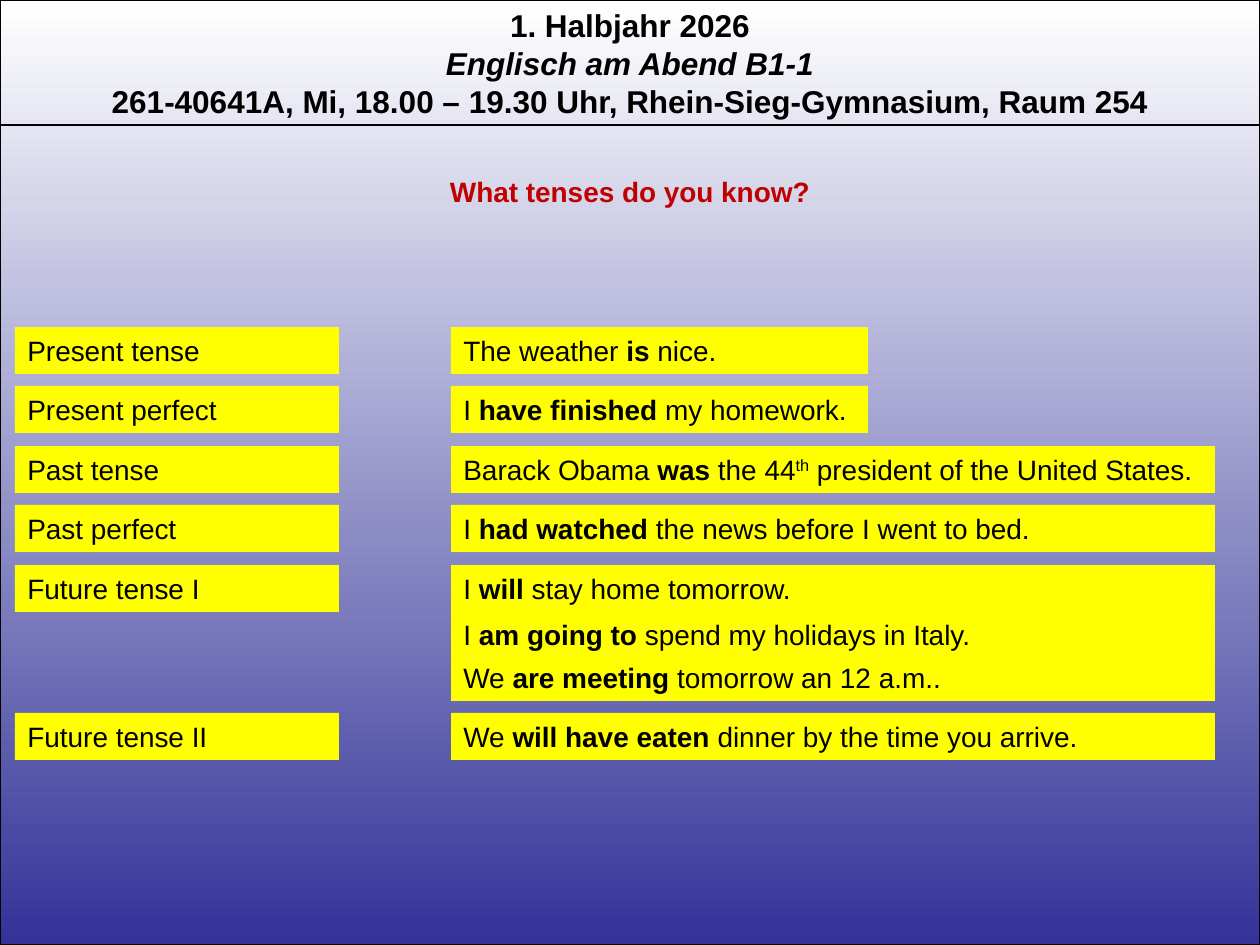
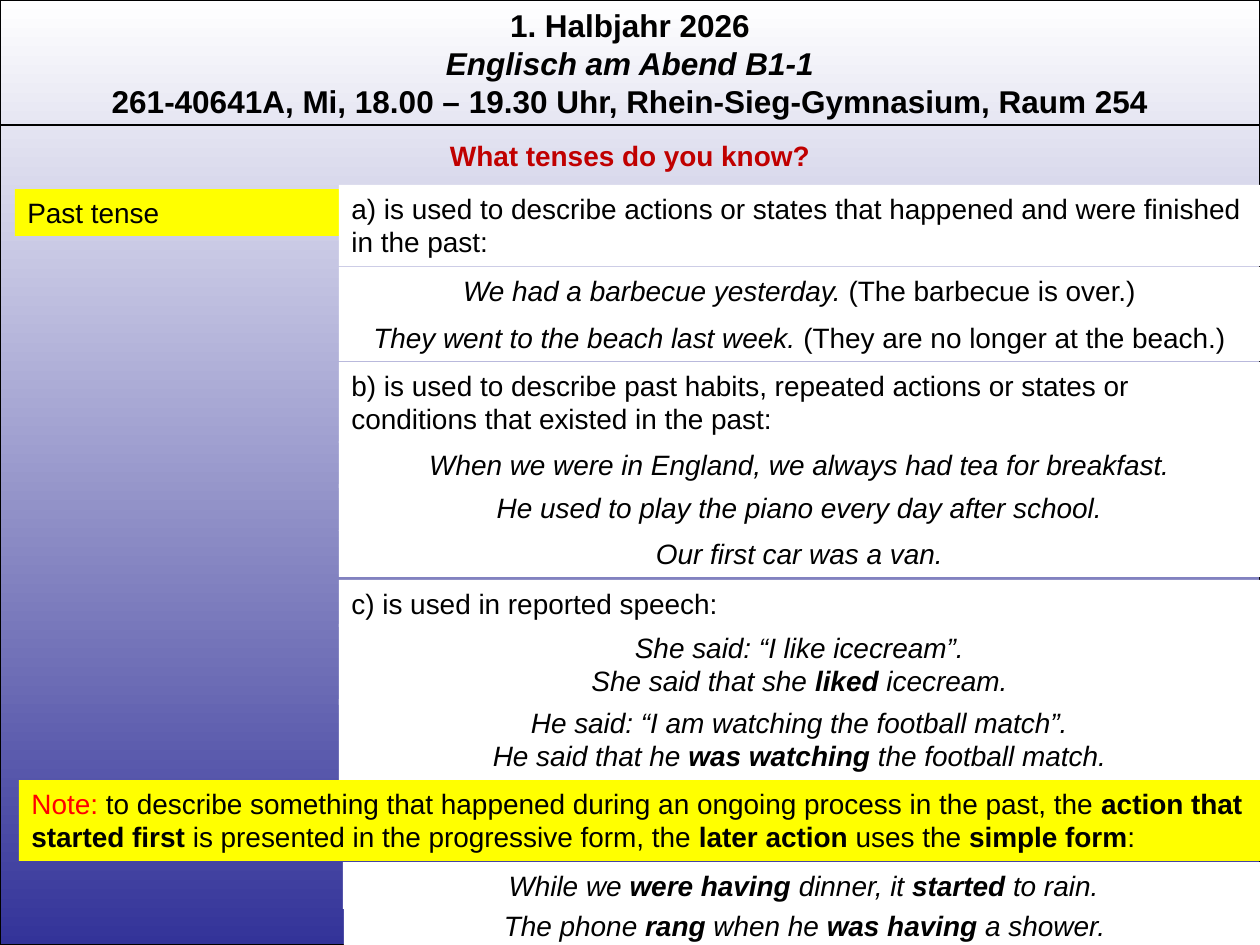
"""Build two English-course slides about tenses."""
from dataclasses import dataclass
from itertools import count

from lxml.etree import SubElement
from pptx import Presentation
from pptx.dml.color import RGBColor as Rgb
from pptx.enum.shapes import MSO_CONNECTOR as Connector, MSO_SHAPE as Preset
from pptx.enum.text import MSO_ANCHOR as Anchor, MSO_AUTO_SIZE as AutoSize, PP_ALIGN as Align
from pptx.oxml.ns import qn
from pptx.util import Emu, Pt

HEADER = [
    "*1. Halbjahr 2026*",
    "*_Englisch am Abend B1-1_*",
    "*261-40641A, Mi, 18.00 – 19.30 Uhr, Rhein-Sieg-Gymnasium, Raum 254*",
]
QUESTION = "What tenses do you know?"

SHORT, LONG = 417, 764
TENSES = [
    ("Present tense", SHORT, ["The weather *is* nice."]),
    ("Present perfect", SHORT, ["I *have finished *my homework."]),
    ("Past tense", LONG, ["Barack Obama *was* the 44^th^ president of the United States."]),
    ("Past perfect", LONG, ["I *had watched *the news before I went to bed."]),
    ("Future tense I", LONG, [
        "I *will *stay home tomorrow.",
        "I *am going to* spend my holidays in Italy.",
        "We *are meeting *tomorrow an 12 a.m..",
    ]),
    ("Future tense II", LONG, ["We *will have eaten *dinner by the time you arrive."]),
]

RULES = [
    (185, ["a) is used to describe actions or states that happened and were finished in the past:"]),
    (362, ["b) is used to describe past habits, repeated actions or states or conditions "
           "that existed in the past:"]),
    (580, ["c) is used in reported speech:"]),
]
EXAMPLES = [
    (339, 267, ["_We had a barbecue yesterday. _(The barbecue is over.)"]),
    (339, 314, ["_They went to the beach last week. _(They are no longer at the beach.)"]),
    (339, 441, ["_When we were in England, we always had tea for breakfast._"]),
    (339, 484, ["_He used to play the piano every day after school._"]),
    (339, 530, ["_Our first car was a van._"]),
    (339, 624, ["_She said: “I like icecream”._", "_She said that she *liked *icecream._"]),
    (339, 699, ["_He said: “I am watching the football match”._",
                "_He said that he *was watching *the football match._"]),
    (343, 862, ["_While we *were having *dinner, it *started *to rain._"]),
    (344, 902, ["_The phone *rang *when he *was having *a shower._"]),
]
NOTE = ("~Note: ~to describe something that happened during an ongoing process in the past, the "
        "*action that started first *is presented in the progressive form, the "
        "*later action *uses the *simple form*:")


@dataclass(frozen=True)
class Theme:
    """Shared colours, font and type sizes."""
    font: str = "Arial"
    header_size: int = 18
    text_size: int = 16
    ink: Rgb = Rgb(0, 0, 0)
    paper: Rgb = Rgb(255, 255, 255)
    depth: Rgb = Rgb(0x33, 0x33, 0x99)
    highlight: Rgb = Rgb(255, 255, 0)
    question: Rgb = Rgb(0xC0, 0, 0)
    alert: Rgb = Rgb(255, 0, 0)


THEME = Theme()
PX = 914400 / 126
WIDTH, HEIGHT = 1260, 945
ONE_LINE, TWO_LINES = 47, 81
LABEL_LEFT, LABEL_WIDTH = 15, 324
SENTENCE_LEFT, RULE_LEFT, RULE_WIDTH = 451, 339, 921
STACK = (0, 46, 89)
MARKS = "*_^~"


def px(*lengths):
    """Convert pixel lengths to EMU."""
    return [Emu(round(length * PX)) for length in lengths]


def marked_spans(line):
    """Split a line into (text, active marks) at its toggling marks."""
    active, text = set(), ""
    for char in line:
        if char in MARKS:
            if text:
                yield text, frozenset(active)
            active ^= {char}
            text = ""
        else:
            text += char
    if text:
        yield text, frozenset(active)


def write(box, lines, size=THEME.text_size, align=Align.LEFT, color=THEME.ink):
    """Write marked lines into a shape, one paragraph each."""
    frame = box.text_frame
    frame.word_wrap = True
    frame.vertical_anchor = Anchor.TOP
    frame.auto_size = AutoSize.SHAPE_TO_FIT_TEXT
    for number, line in enumerate(lines):
        para = frame.add_paragraph() if number else frame.paragraphs[0]
        para.alignment = align
        for text, marks in marked_spans(line):
            span = para.add_run()
            span.text = text
            font = span.font
            font.name, font.size = THEME.font, Pt(size)
            font.bold, font.italic = "*" in marks, "_" in marks
            font.color.rgb = THEME.alert if "~" in marks else color
            if "^" in marks:
                span.font._element.set("baseline", "30000")


def add_box(shapes, area, lines, fill=THEME.highlight, align=Align.LEFT):
    """Add a borderless filled rectangle with text."""
    box = shapes.add_shape(Preset.RECTANGLE, *px(*area))
    box.shadow.inherit = False
    box.fill.solid()
    box.fill.fore_color.rgb = fill
    box.line.fill.background()
    write(box, lines, align=align)


def outline(shape):
    """Give a shape the thin dark line of the frame."""
    shape.line.color.rgb = THEME.ink
    shape.line.width = Pt(0.75)


def add_frame(deck, slide):
    """Build gradient, header and rule, then move them to the slide master."""
    backdrop = slide.shapes.add_shape(Preset.RECTANGLE, *px(0, 0, WIDTH, HEIGHT))
    backdrop.shadow.inherit = False
    backdrop.fill.gradient()
    backdrop.fill.gradient_angle = 270
    for stop, color in zip(backdrop.fill.gradient_stops, (THEME.paper, THEME.depth)):
        stop.color.rgb = color
    outline(backdrop)

    header = slide.shapes.add_textbox(*px(0, 0, WIDTH, 127))
    write(header, HEADER, THEME.header_size, Align.CENTER)

    rule = slide.shapes.add_connector(Connector.STRAIGHT, *px(0, 125, WIDTH, 125))
    outline(rule)
    SubElement(rule.element.spPr, qn("a:effectLst"))

    tree = deck.slide_master.shapes.element
    for position, shape_id, part in zip(count(2), count(101), (backdrop, header, rule)):
        part.element.xpath(".//p:cNvPr")[0].set("id", str(shape_id))
        tree.insert(position, part.element)


def add_slide(deck, question_top):
    """Add a slide with the question as its title."""
    slide = deck.slides.add_slide(deck.slide_layouts.get_by_name("Title Only"))
    title = slide.shapes.title
    title.left, title.top, title.width, title.height = px(0, question_top, WIDTH, ONE_LINE)
    write(title, [f"*{QUESTION}*"], align=Align.CENTER, color=THEME.question)
    return slide


def add_overview(slide):
    """Place each tense beside its example sentences."""
    shift = 0
    for row, (tense, width, sentences) in enumerate(TENSES):
        top = 327 + row * 119 // 2 + shift
        add_box(slide.shapes, (LABEL_LEFT, top, LABEL_WIDTH, ONE_LINE), [tense])
        grouped = len(sentences) > 1
        shapes = slide.shapes.add_group_shape().shapes if grouped else slide.shapes
        for offset, sentence in zip(STACK, sentences):
            add_box(shapes, (SENTENCE_LEFT, top + offset, width, ONE_LINE), [sentence])
        shift += STACK[len(sentences) - 1]


def add_past_tense(slide):
    """Place the uses of the past tense with examples and a note."""
    shapes = slide.shapes
    add_box(shapes, (LABEL_LEFT, 189, LABEL_WIDTH, ONE_LINE), ["Past tense"])
    for top, lines in RULES:
        height = TWO_LINES if len(lines[0]) > 70 else ONE_LINE
        add_box(shapes, (RULE_LEFT, top, RULE_WIDTH, height), lines, THEME.paper)
    for left, top, lines in EXAMPLES:
        height = TWO_LINES if len(lines) > 1 else ONE_LINE
        add_box(shapes, (left, top, RULE_WIDTH, height), lines, THEME.paper, Align.CENTER)
    add_box(shapes, (19, 780, 1241, TWO_LINES), [NOTE])


def main():
    """Build and save the deck."""
    deck = Presentation()
    deck.slide_width, deck.slide_height = px(WIDTH, HEIGHT)
    overview = add_slide(deck, 168)
    add_frame(deck, overview)
    add_overview(overview)
    add_past_tense(add_slide(deck, 132))
    deck.save("out.pptx")


if __name__ == "__main__":
    main()
